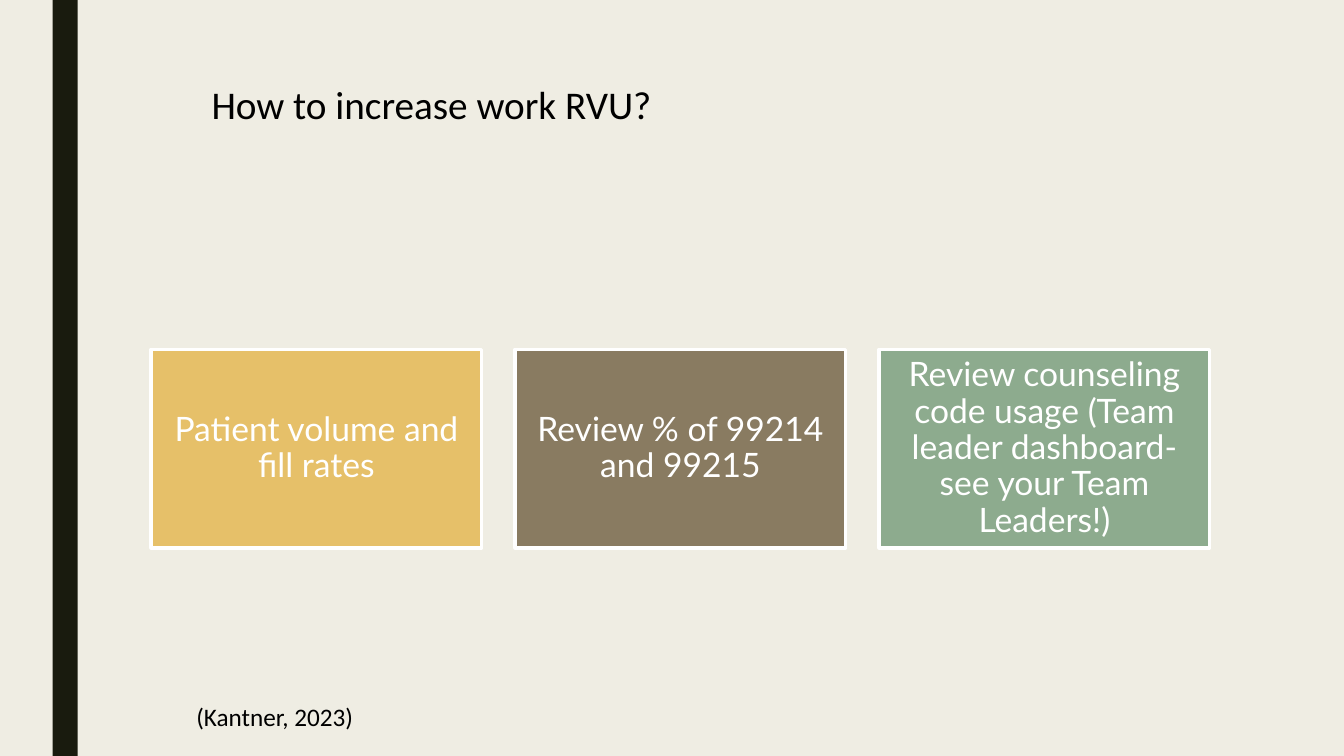
import pptx
import pptx.util
import pptx.dml.color
import pptx.enum.shapes
import pptx.enum.text

ALIGN = pptx.enum.text.PP_ALIGN
ANCHOR = pptx.enum.text.MSO_ANCHOR
COLS, ROWS = 160, 90
COL = pptx.util.Inches(13.333) / COLS
ROW = pptx.util.Inches(7.5) / ROWS

HUES = {
    "page": "EFEDE3", "stripe": "191B0E", "ink": "000000", "white": "FFFFFF",
    "gold": "E6C069", "brown": "897B61", "green": "8DAB8E",
}
CARDS = [
    ("gold", "Patient volume and fill rates"),
    ("brown", "Review % of 99214 and 99215"),
    ("green", "Review counseling code usage (Team leader dashboard- "
              "see your Team Leaders!)"),
]
INSET = pptx.util.Inches(0.1)
CARD_FRAME = {
    "word_wrap": True, "vertical_anchor": ANCHOR.MIDDLE,
    "margin_left": INSET, "margin_right": INSET,
    "margin_top": INSET, "margin_bottom": INSET,
}


def tint(name):
    return pptx.dml.color.RGBColor.from_string(HUES[name])


def place(box):
    """Turn a box of grid columns and rows into slide lengths."""
    left, top, width, height = box
    return [round(n) for n in (left * COL, top * ROW, width * COL, height * ROW)]


def apply(target, values):
    for name, value in values.items():
        setattr(target, name, value)


def write(shape, text, hue, frame, para, font):
    body = shape.text_frame
    apply(body, frame)
    line = body.paragraphs[0]
    apply(line, para)
    run = line.add_run()
    run.text = text
    apply(run.font, font)
    run.font.color.rgb = tint(hue)


def add_block(slide, box, hue):
    kind = pptx.enum.shapes.MSO_SHAPE.RECTANGLE
    block = slide.shapes.add_shape(kind, *place(box))
    block.shadow.inherit = False
    block.fill.solid()
    block.fill.fore_color.rgb = tint(hue)
    block.line.fill.background()
    return block


def add_label(slide, box, text, size, frame, indent=0):
    label = slide.shapes.add_textbox(*place(box))
    write(label, text, "ink", frame, {"alignment": ALIGN.LEFT},
          {"name": "Calibri", "size": pptx.util.Pt(size)})
    if indent:
        props = label.text_frame.paragraphs[0]._p.get_or_add_pPr()
        props.set("marL", str(pptx.util.Inches(indent)))
        props.set("indent", "0")


def add_cards(slide, box, gap):
    """Spread the cards evenly over the box, with gap columns between."""
    left, top, width, height = box
    wide = (width - gap * (len(CARDS) - 1)) / len(CARDS)
    for i, (hue, text) in enumerate(CARDS):
        card = add_block(slide, (left + i * (wide + gap), top, wide, height), hue)
        card.line.color.rgb = tint("white")
        card.line.width = pptx.util.Pt(2.75)
        write(card, text, "white", CARD_FRAME,
              {"alignment": ALIGN.CENTER, "line_spacing": 0.9},
              {"name": "Lato", "size": pptx.util.Pt(24)})


def main():
    deck = pptx.Presentation()
    apply(deck, {"slide_width": round(COLS * COL), "slide_height": round(ROWS * ROW)})
    slide = deck.slides.add_slide(deck.slide_layouts[6])
    slide.background.fill.solid()
    slide.background.fill.fore_color.rgb = tint("page")

    add_block(slide, (6.25, 0, 3, ROWS), "stripe")
    add_label(slide, (18, 9, 126, 19.5), "How to increase work RVU?", 28,
              {"word_wrap": True}, indent=0.5)
    add_cards(slide, (18, 41.6, 126, 23.6), gap=4)
    add_label(slide, (22.2, 82.9, 21.4, 7.1), "(Kantner, 2023)", 18,
              {"word_wrap": False})
    deck.save("out.pptx")


if __name__ == "__main__":
    main()
